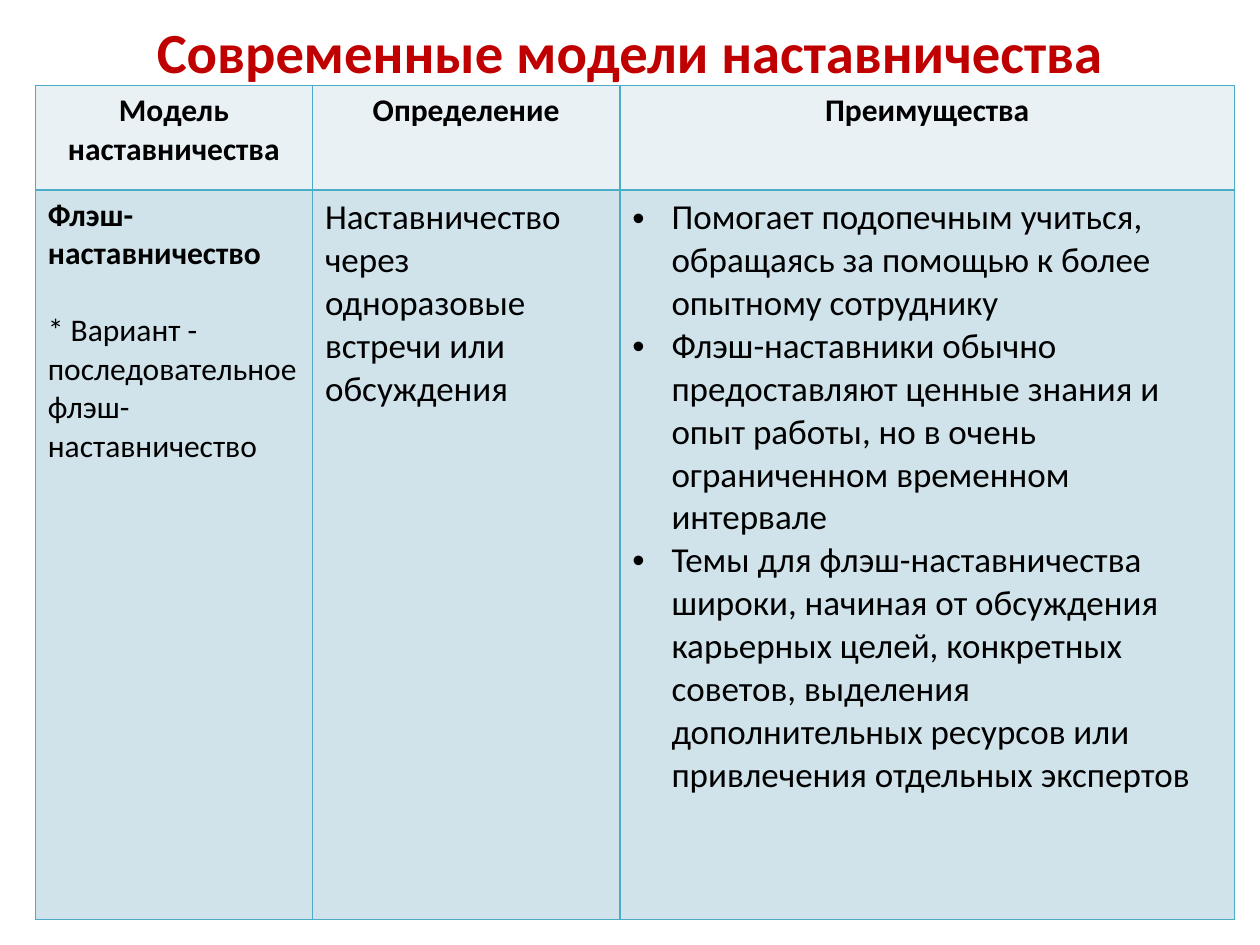
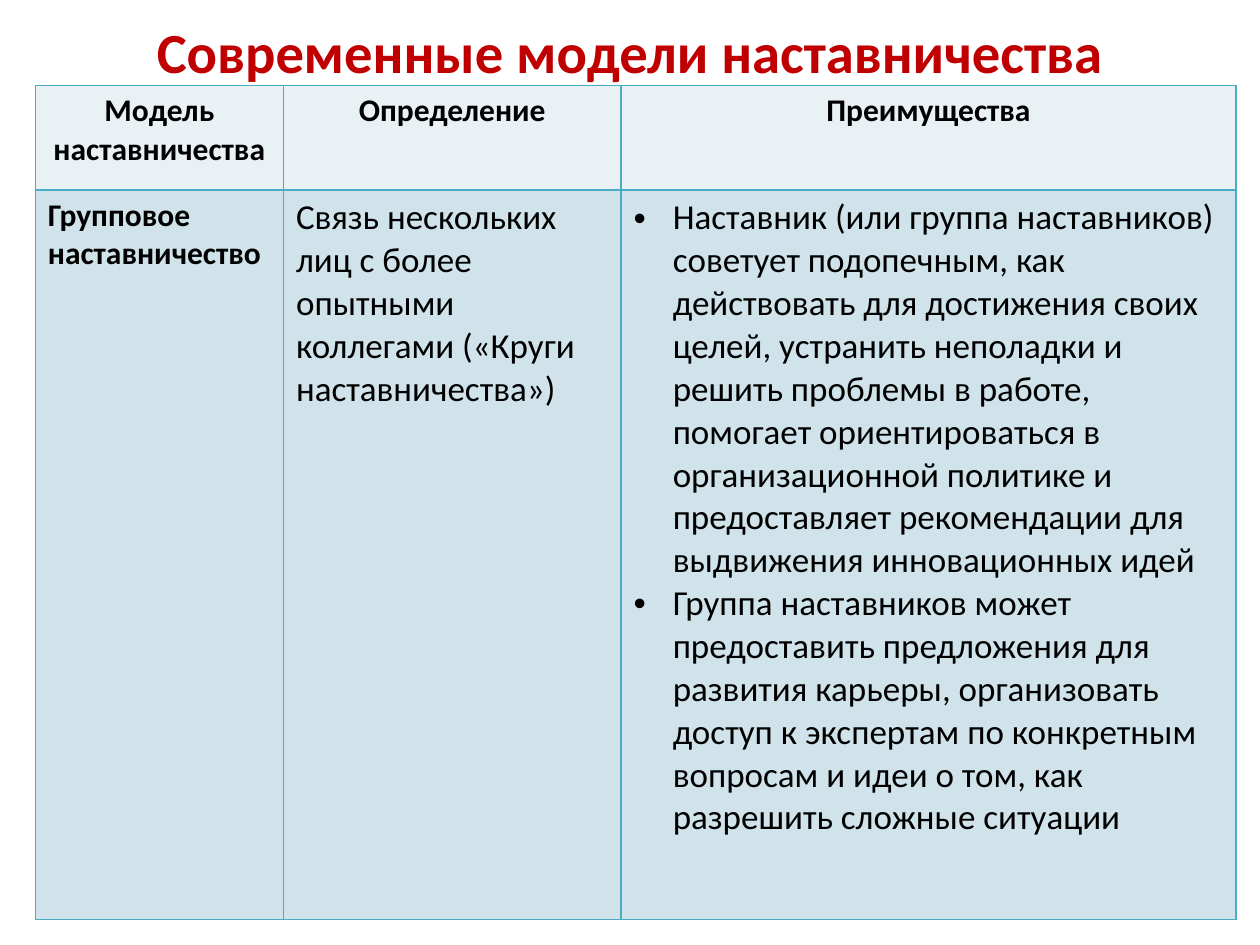
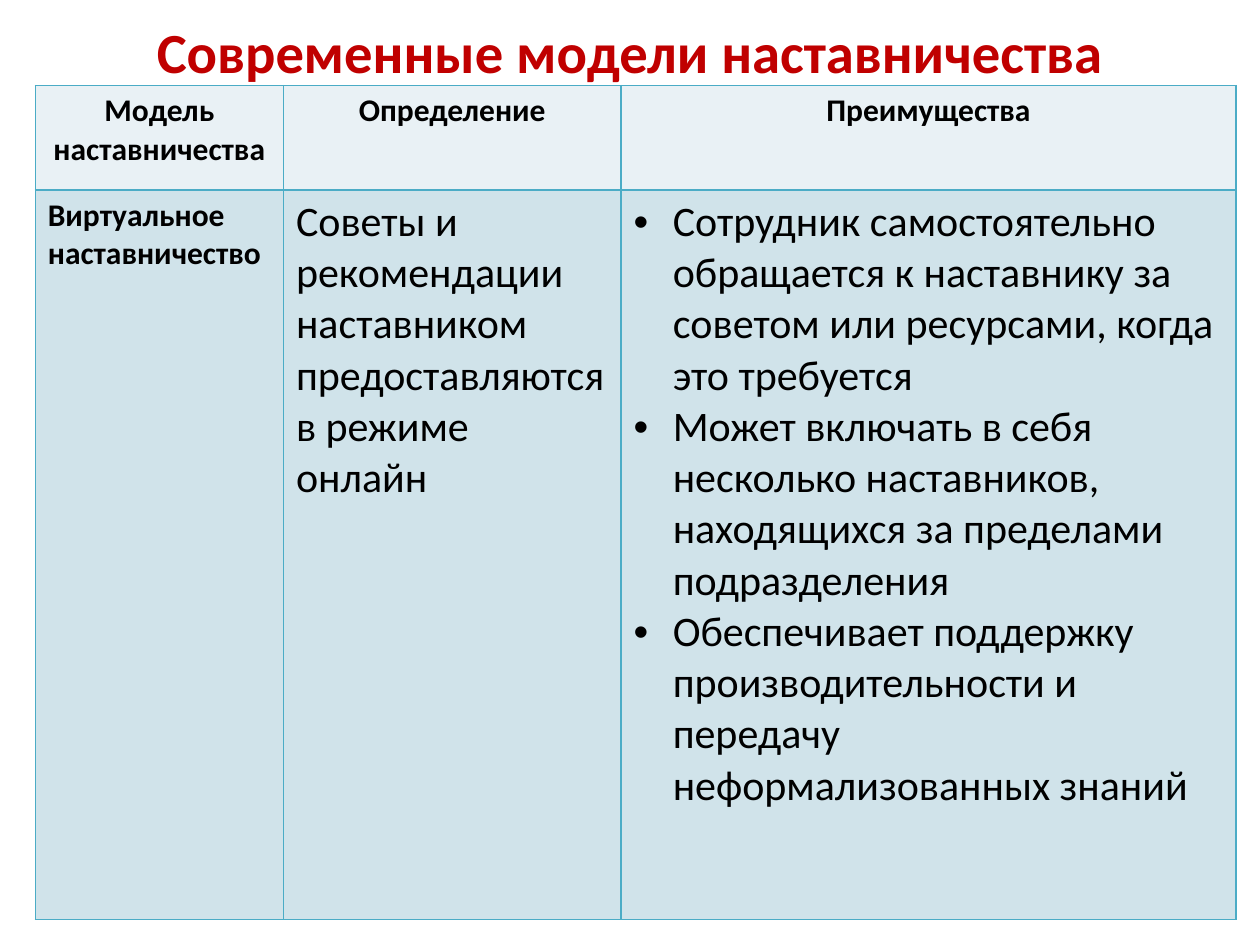
"""Build three slides on modern mentoring models, each with one table."""
import lxml.etree
import pptx
import pptx.dml.color
import pptx.enum.text
import pptx.oxml.ns
import pptx.util

Inches = pptx.util.Inches
Align = pptx.enum.text.PP_ALIGN

TITLE = "Современные модели наставничества"
HEADERS = ["Модель наставничества", "Определение", "Преимущества"]
MODELS = [
    {
        "name": "Флэш-наставничество",
        "variant": "* Вариант - последовательное флэш-наставничество",
        "definition": "Наставничество через одноразовые встречи или обсуждения",
        "benefits": [
            "Помогает подопечным учиться, обращаясь за помощью к более опытному сотруднику",
            "Флэш-наставники обычно предоставляют ценные знания и опыт работы, "
            "но в очень ограниченном временном интервале",
            "Темы для флэш-наставничества широки, начиная от обсуждения карьерных целей, "
            "конкретных советов, выделения дополнительных ресурсов или привлечения "
            "отдельных экспертов",
        ],
        "size": 20,
        "columns": [2.2, 2.44, 4.88],
    },
    {
        "name": "Групповое наставничество",
        "definition": "Связь нескольких лиц с более опытными коллегами («Круги наставничества»)",
        "benefits": [
            "Наставник (или группа наставников) советует подопечным, как действовать для "
            "достижения своих целей, устранить неполадки и решить проблемы в работе, "
            "помогает ориентироваться в организационной политике и предоставляет "
            "рекомендации для выдвижения инновационных идей",
            "Группа наставников может предоставить предложения для развития карьеры, "
            "организовать доступ к экспертам по конкретным вопросам и идеи о том, "
            "как разрешить сложные ситуации",
        ],
        "size": 20,
        "columns": [1.97, 2.68, 4.88],
    },
    {
        "name": "Виртуальное наставничество",
        "definition": "Советы и рекомендации наставником предоставляются в режиме онлайн",
        "benefits": [
            "Сотрудник самостоятельно обращается к наставнику за советом или ресурсами, "
            "когда это требуется",
            "Может включать в себя несколько наставников, находящихся за пределами "
            "подразделения",
            "Обеспечивает поддержку производительности и передачу неформализованных знаний",
        ],
        "size": 24,
        "columns": [1.97, 2.68, 4.88],
    },
]

FONT = "Calibri"
TITLE_COLOR, TEXT_COLOR, BORDER_COLOR = "C00000", "000000", "4BACC6"
ROW_FILLS = ["E9F1F5", "D0E3EA"]
ROW_HEIGHTS = [0.83, 5.79]
LABEL_SIZE = 18
VARIANT_GAP = 22
BULLET_INDENT = 0.31


def rgb(value):
    return pptx.dml.color.RGBColor.from_string(value)


def add_child(parent, tag, **attributes):
    return lxml.etree.SubElement(parent, pptx.oxml.ns.qn(tag), attributes)


def write(paragraph, text, size, bold=False, color=TEXT_COLOR, align=Align.LEFT):
    paragraph.text = text
    paragraph.alignment = align
    font = paragraph.font
    font.name, font.size, font.bold = FONT, pptx.util.Pt(size), bold
    font.color.rgb = rgb(color)


def add_bullet(paragraph):
    properties = paragraph._p.get_or_add_pPr()
    properties.set("marL", str(Inches(BULLET_INDENT)))
    properties.set("indent", str(-Inches(BULLET_INDENT)))
    add_child(properties, "a:buFont", typeface="Arial")
    add_child(properties, "a:buChar", char="•")


def style_cell(cell, fill):
    properties = cell._tc.get_or_add_tcPr()
    for side in ("a:lnL", "a:lnR", "a:lnT", "a:lnB"):
        line = add_child(properties, side, w=str(pptx.util.Pt(1)))
        add_child(add_child(line, "a:solidFill"), "a:srgbClr", val=BORDER_COLOR)
    cell.fill.solid()
    cell.fill.fore_color.rgb = rgb(fill)


def add_title(slide):
    box = slide.shapes.add_textbox(Inches(0.5), Inches(0.21), Inches(9), Inches(0.39))
    frame = box.text_frame
    frame.word_wrap = True
    frame.auto_size = pptx.enum.text.MSO_AUTO_SIZE.NONE
    frame.vertical_anchor = pptx.enum.text.MSO_ANCHOR.MIDDLE
    write(frame.paragraphs[0], TITLE, 32.4, True, TITLE_COLOR, Align.CENTER)


def add_model_table(slide, model):
    columns = model["columns"]
    table = slide.shapes.add_table(
        len(ROW_HEIGHTS), len(columns), Inches(0.28), Inches(0.68),
        Inches(sum(columns)), Inches(sum(ROW_HEIGHTS))).table
    for column, width in zip(table.columns, columns):
        column.width = Inches(width)
    for row, height, fill in zip(table.rows, ROW_HEIGHTS, ROW_FILLS):
        row.height = Inches(height)
        for cell in row.cells:
            style_cell(cell, fill)

    for cell, header in zip(table.rows[0].cells, HEADERS):
        write(cell.text_frame.paragraphs[0], header, LABEL_SIZE, True, align=Align.CENTER)

    name, definition, benefits = (cell.text_frame for cell in table.rows[1].cells)
    write(name.paragraphs[0], model["name"], LABEL_SIZE, True)
    if "variant" in model:
        variant = name.add_paragraph()
        variant.space_before = pptx.util.Pt(VARIANT_GAP)
        write(variant, model["variant"], LABEL_SIZE)
    write(definition.paragraphs[0], model["definition"], model["size"])
    for index, benefit in enumerate(model["benefits"]):
        paragraph = benefits.add_paragraph() if index else benefits.paragraphs[0]
        add_bullet(paragraph)
        write(paragraph, benefit, model["size"])


def main():
    presentation = pptx.Presentation()
    presentation.slide_width, presentation.slide_height = Inches(10), Inches(7.5)
    for model in MODELS:
        slide = presentation.slides.add_slide(presentation.slide_layouts[6])
        add_title(slide)
        add_model_table(slide, model)
    presentation.save("out.pptx")


if __name__ == "__main__":
    main()
